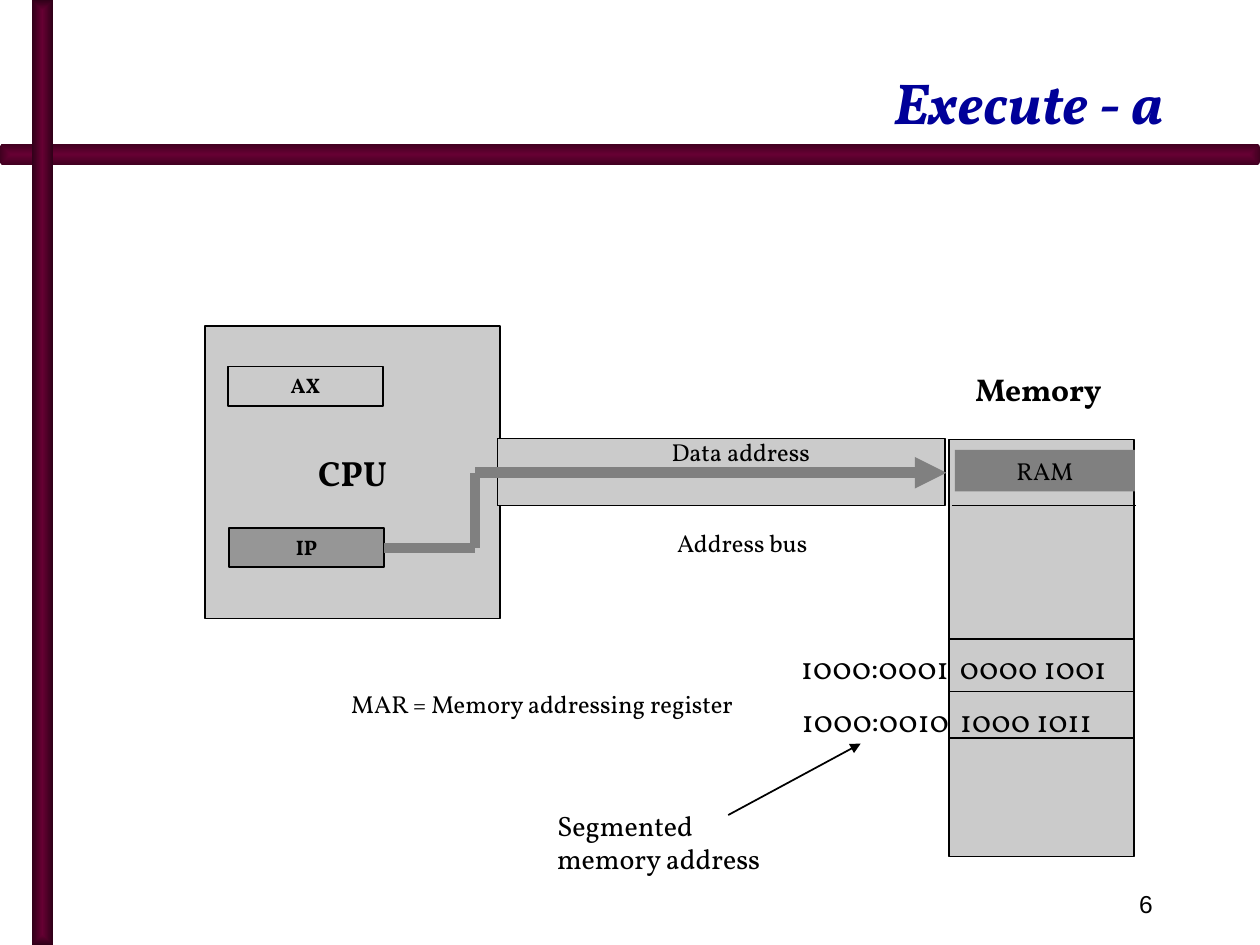
from dataclasses import dataclass
from itertools import pairwise
from typing import Optional

from lxml.etree import SubElement
from pptx import Presentation
from pptx.dml.color import RGBColor
from pptx.enum.shapes import MSO_CONNECTOR, MSO_SHAPE
from pptx.enum.text import MSO_ANCHOR, PP_ALIGN
from pptx.oxml.ns import qn
from pptx.util import Cm, Pt


@dataclass(frozen=True)
class Theme:
    font: str = "Vollkorn"
    number_font: str = "Arial"
    ink: str = "000000"
    title: str = "000099"
    bar: str = "660033"
    bar_edge: str = "410020"
    bar_dark_edge: str = "2F0018"
    panel: str = "CBCBCB"
    register: str = "969696"
    signal: str = "808080"
    title_size: int = 33
    unit_size: int = 20
    heading_size: int = 18
    note_size: int = 16
    label_size: int = 14
    register_size: int = 12


THEME = Theme()
NORMAL_INSETS = (0.25, 0.13)
TIGHT_INSETS = (0.05, 0.03)


@dataclass(frozen=True)
class Box:
    """A rectangle or text label; lengths in centimetres."""
    left: float
    top: float
    width: float
    height: float
    text: str = ""
    size: int = THEME.label_size
    bold: bool = False
    align: PP_ALIGN = PP_ALIGN.CENTER
    anchor: MSO_ANCHOR = MSO_ANCHOR.TOP
    fill: Optional[str] = None
    outlined: bool = False
    insets: tuple = NORMAL_INSETS
    font: str = THEME.font


@dataclass(frozen=True)
class Line:
    """A straight line; points in centimetres."""
    start: tuple
    end: tuple
    color: str = THEME.ink
    weight: float = 1
    arrow: bool = False


def apply_format(target, values: dict) -> None:
    for name, value in values.items():
        setattr(target, name, value)


def write_text(frame, box: Box, color: str = THEME.ink, italic: bool = False) -> None:
    side, edge = (Cm(inset) for inset in box.insets)
    apply_format(frame, {
        "word_wrap": True, "vertical_anchor": box.anchor,
        "margin_left": side, "margin_right": side,
        "margin_top": edge, "margin_bottom": edge})
    para = frame.paragraphs[0]
    para.alignment = box.align
    span = para.add_run()
    span.text = box.text
    apply_format(span.font, {
        "name": box.font, "size": Pt(box.size), "bold": box.bold, "italic": italic})
    span.font.color.rgb = RGBColor.from_string(color)


def draw_box(page, box: Box) -> None:
    place = [Cm(v) for v in (box.left, box.top, box.width, box.height)]
    if box.fill or box.outlined:
        shape = page.shapes.add_shape(MSO_SHAPE.RECTANGLE, *place)
        shape.shadow.inherit = False
        if box.fill:
            shape.fill.solid()
            shape.fill.fore_color.rgb = RGBColor.from_string(box.fill)
        else:
            shape.fill.background()
        if box.outlined:
            shape.line.color.rgb = RGBColor.from_string(THEME.ink)
            shape.line.width = Pt(1)
        else:
            shape.line.fill.background()
    else:
        shape = page.shapes.add_textbox(*place)
    if box.text:
        write_text(shape.text_frame, box)


def draw_line(page, line: Line) -> None:
    connector = page.shapes.add_connector(
        MSO_CONNECTOR.STRAIGHT, *(Cm(v) for v in line.start + line.end))
    connector.line.color.rgb = RGBColor.from_string(line.color)
    connector.line.width = Pt(line.weight)
    properties = connector._element.spPr
    if line.arrow:
        SubElement(properties.find(qn("a:ln")), qn("a:tailEnd"), type="triangle")
    SubElement(properties, qn("a:effectLst"))


def draw_bar(page, kind: MSO_SHAPE, place: tuple, edge_color: str) -> None:
    bar = page.shapes.add_shape(kind, *(Cm(v) for v in place))
    bar.shadow.inherit = False
    bar.line.fill.background()
    bar.fill.gradient()
    for stop, color, position in zip(
            bar.fill.gradient_stops, (THEME.bar, edge_color), (0, 1)):
        stop.color.rgb = RGBColor.from_string(color)
        stop.position = position
    # Shade outwards from the centre
    gradient = bar._element.spPr.find(qn("a:gradFill"))
    gradient.remove(gradient.find(qn("a:lin")))
    shade = SubElement(gradient, qn("a:path"), path="shape")
    SubElement(shade, qn("a:fillToRect"), l="50000", t="50000", r="50000", b="50000")


def draw_title(page) -> None:
    box = Box(2.11, 0.43, 21.59, 2.44, "Execute - a", THEME.title_size, True,
              PP_ALIGN.RIGHT, MSO_ANCHOR.BOTTOM)
    title = page.shapes.title
    apply_format(title, {name: Cm(getattr(box, name))
                         for name in ("left", "top", "width", "height")})
    write_text(title.text_frame, box, THEME.title, italic=True)


def divider(y: float, left: float = 19.15) -> Line:
    return Line((left, y), (left + 3.71, y))


def register(left: float, top: float, text: str, fill: Optional[str] = None) -> Box:
    return Box(left, top, 3.12, 0.79, text, THEME.register_size, True,
               fill=fill, outlined=True)


def memory_row(top: float, address: str, content: str) -> list:
    return [Box(19.1, top, 4.29, 1.02, content, THEME.heading_size, align=PP_ALIGN.LEFT),
            Box(15.45, top + 0.11, 3.73, 0.81, address, THEME.heading_size,
                align=PP_ALIGN.RIGHT, insets=TIGHT_INSETS)]


SIGNAL_ROUTE = [(7.75, 11.05), (9.58, 11.05), (9.58, 9.53), (19.08, 9.53)]

# Diagram parts, from back to front
PARTS = [
    # Processor and memory
    Box(4.14, 6.58, 5.94, 5.89, "CPU", THEME.unit_size, True,
        anchor=MSO_ANCHOR.MIDDLE, fill=THEME.panel, outlined=True),
    Box(19.13, 8.86, 3.73, 8.41, fill=THEME.panel, outlined=True),
    register(4.6, 7.39, "AX"),
    register(4.62, 10.64, "IP", THEME.register),
    Box(18.8, 7.32, 4.27, 1.02, "Memory", THEME.heading_size, True),
    # Memory rows
    *map(divider, (12.88, 13.94, 14.88)),
    *memory_row(12.93, "1000:0001", "0000 1001"),
    *memory_row(14, "1000:0010", "1000 1011"),
    # Address bus and the signal on it
    Box(10.03, 8.84, 9.02, 1.35, fill=THEME.panel, outlined=True),
    *(Line(start, end, THEME.signal, 6, end == SIGNAL_ROUTE[-1])
      for start, end in pairwise(SIGNAL_ROUTE)),
    Box(11.89, 10.52, 6.15, 0.84, "Address bus"),
    Box(19.25, 9.07, 3.63, 0.84, "RAM", fill=THEME.signal),
    divider(10.19, 19.2),
    Box(11.86, 8.69, 6.15, 0.84, "Data address"),
    # Notes
    Box(6.83, 13.77, 10.21, 0.84, "MAR = Memory addressing register",
        align=PP_ALIGN.LEFT),
    Line((14.68, 16.43), (17.35, 14.99), arrow=True),
    Box(11.18, 16.26, 4.78, 1.42, "Segmented memory address", THEME.note_size,
        align=PP_ALIGN.LEFT, insets=TIGHT_INSETS),
    # Page number
    Box(18.21, 17.58, 5.28, 1.27, "6", align=PP_ALIGN.RIGHT,
        anchor=MSO_ANCHOR.MIDDLE, font=THEME.number_font),
]


def main() -> None:
    deck = Presentation()
    deck.slide_width, deck.slide_height = Cm(25.4), Cm(19.05)
    page = deck.slides.add_slide(deck.slide_layouts.get_by_name("Title Only"))
    draw_bar(page, MSO_SHAPE.ROUNDED_RECTANGLE, (0, 2.9, 25.4, 0.43), THEME.bar_edge)
    draw_bar(page, MSO_SHAPE.RECTANGLE, (0.64, 0, 0.43, 19.05), THEME.bar_dark_edge)
    draw_title(page)
    for part in PARTS:
        if isinstance(part, Line):
            draw_line(page, part)
        else:
            draw_box(page, part)
    deck.save("out.pptx")


if __name__ == "__main__":
    main()
